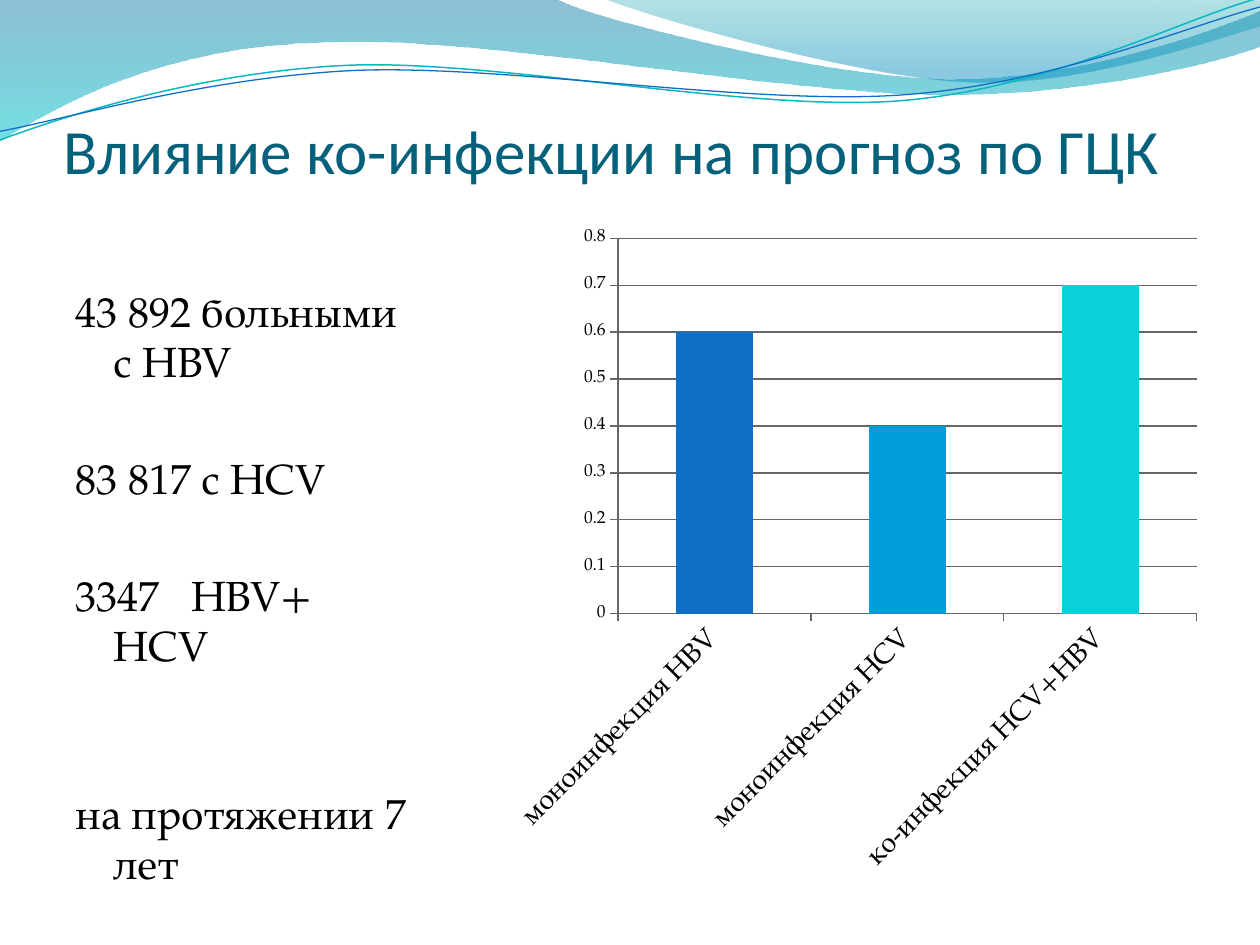
from lxml.etree import Element, SubElement
from pptx import Presentation
from pptx.chart.data import CategoryChartData
from pptx.dml.color import RGBColor
from pptx.enum.chart import XL_CHART_TYPE, XL_TICK_MARK
from pptx.enum.text import MSO_ANCHOR, MSO_AUTO_SIZE, PP_ALIGN
from pptx.oxml.ns import qn
from pptx.util import Pt

# Content
TITLE = "Влияние ко-инфекции на прогноз по ГЦК"
# Spans of text and the space before them, in points; the wide gap is one spaced-out blank
WIDE_GAP = " "
COHORTS = [
    (["43 892 больными с HBV"], 0),
    (["83 817 с HCV"], 38),
    (["3347", WIDE_GAP, "HBV+ HCV"], 38),
    (["на протяжении 7 лет"], 67),
]
# Category, value, bar colour
BARS = [
    ("моноинфекция HBV", 0.6, "0F6FC6"),
    ("моноинфекция HCV", 0.4, "009DD9"),
    ("ко-инфекция HCV+HBV", 0.7, "0BD0D9"),
]
HEADING_FONT, BODY_FONT = "Calibri", "TeX Gyre Pagella"
# Chart frame and plot area on the page: left, top, width, height
CHART_FRAME = (286.5, 124, 405.5, 382)
PLOT_FRAME = (353.1, 136.2, 330.9, 214.6)

# Header waves: a start, then line ends (one point) or Bezier curves (three points)
BANDS = [
    ([[(0, 0)], [(317, -1)],
      [(343, 12), (478, 45), (546, 45)], [(614, 45), (690, 19), (720, 6)], [(721, 26)],
      [(708, 32), (626, 55), (537, 54)], [(446, 54), (275, 20), (185, 24)],
      [(93, 26), (33, 60), (-1, 81)]],
     [(0, "0074A1", 45), (1, "00C6CF", 55)]),
    ([[(345, -1)], [(366, 8), (491, 45), (554, 47)],
      [(616, 50), (692, 23), (720, 15)], [(720, 0)]],
     [(0, "00A1A9", 30), (0.8, "008BBF", 45)]),
]
STRANDS = [
    ([[(0, 80)], [(35, 67), (114, 41), (199.5, 37.3)],
      [(284, 34), (427, 64), (513, 57.7)], [(600, 51), (675, 11), (719, -1)]],
     "0AB8BF", 0.85),
    ([[(0, 75)], [(34, 69), (118, 44), (204, 40.2)],
      [(290, 37), (430, 60.5), (516, 54.2)], [(602, 48), (678, 15), (720, 4)]],
     "0F6FC6", 0.75),
]


def color(value):
    return RGBColor.from_string(value)


def add_outline(shapes, segments, close):
    """Draw a freeform whose three-point segments are Bezier curves."""
    start, *rest = [(Pt(x), Pt(y)) for segment in segments for x, y in segment]
    builder = shapes.build_freeform(*start)
    builder.add_line_segments(rest, close=close)
    shape = builder.convert_to_shape()
    shape.shadow.inherit = False
    lines = iter(list(shape._element.iter(qn("a:lnTo"))))
    for segment in segments[1:]:
        group = [next(lines) for _ in segment]
        if len(group) == 3:
            curve = Element(qn("a:cubicBezTo"))
            group[0].addprevious(curve)
            for line in group:
                curve.append(line[0])
                line.getparent().remove(line)
    return shape


def add_waves(shapes):
    for segments, stops in BANDS:
        band = add_outline(shapes, segments, True)
        band.line.fill.background()
        band.fill.gradient()
        band.fill.gradient_angle = 270
        for stop, (position, shade, _) in zip(band.fill.gradient_stops, stops):
            stop.position = position
            stop.color.rgb = color(shade)
        for element, (_, _, opacity) in zip(band._element.spPr.iter(qn("a:srgbClr")), stops):
            SubElement(element, qn("a:alpha"), val=str(opacity * 1000))
    for segments, shade, width in STRANDS:
        strand = add_outline(shapes, segments, False)
        strand.fill.background()
        strand.line.color.rgb = color(shade)
        strand.line.width = Pt(width)


def place(box, left, top, width, height):
    box.left, box.top, box.width, box.height = Pt(left), Pt(top), Pt(width), Pt(height)


def style(font, name, size, shade):
    font.name, font.size = name, Pt(size)
    font.color.rgb = color(shade)


def fill_title(box):
    place(box, 36, 56, 648, 51)
    frame = box.text_frame
    frame.text = TITLE
    frame.auto_size = MSO_AUTO_SIZE.NONE
    frame.vertical_anchor = MSO_ANCHOR.BOTTOM
    frame.margin_left = frame.margin_right = frame.margin_bottom = 0
    para = frame.paragraphs[0]
    para.alignment = PP_ALIGN.LEFT
    style(para.font, HEADING_FONT, 36, "04617B")


def fill_body(box):
    place(box, 36, 126, 206, 363.5)
    frame = box.text_frame
    frame.auto_size = MSO_AUTO_SIZE.NONE
    frame.margin_top = Pt(37)
    for index, (texts, gap) in enumerate(COHORTS):
        para = frame.add_paragraph() if index else frame.paragraphs[0]
        for text in texts:
            span = para.add_run()
            span.text = text
            if text == WIDE_GAP:
                span.font._element.set("spc", "1200")
        para.space_before = Pt(gap)
        # Hanging indent, no bullet
        properties = para._p.get_or_add_pPr()
        properties.set("marL", str(Pt(21.6)))
        properties.set("indent", str(-Pt(21.6)))
        SubElement(properties, qn("a:buNone"))
        style(para.font, BODY_FONT, 24, "000000")


def fix_plot_area(chart):
    plot_area = chart._chartSpace.chart.plotArea
    layout = plot_area.find(qn("c:layout"))
    if layout is None:
        layout = Element(qn("c:layout"))
        plot_area.insert(0, layout)
    manual = SubElement(layout, qn("c:manualLayout"))
    left, top, width, height = CHART_FRAME
    plot_left, plot_top, plot_width, plot_height = PLOT_FRAME
    for tag, value in [
        ("layoutTarget", "inner"), ("xMode", "edge"), ("yMode", "edge"),
        ("x", (plot_left - left) / width), ("y", (plot_top - top) / height),
        ("w", plot_width / width), ("h", plot_height / height),
    ]:
        SubElement(manual, qn(f"c:{tag}"), val=str(value))


def add_bar_chart(shapes):
    data = CategoryChartData()
    data.categories = [name for name, _, _ in BARS]
    data.add_series("Series 1", [value for _, value, _ in BARS])
    frame = [Pt(length) for length in CHART_FRAME]
    chart = shapes.add_chart(XL_CHART_TYPE.COLUMN_CLUSTERED, *frame, data).chart
    chart.has_legend = chart.has_title = False
    style(chart.font, BODY_FONT, 10, "000000")
    fix_plot_area(chart)

    # Bars
    plot = chart.plots[0]
    plot.gap_width = 150
    plot.vary_by_categories = False
    for index, (_, _, shade) in enumerate(BARS):
        fill = plot.series[0].points[index].format.fill
        fill.solid()
        fill.fore_color.rgb = color(shade)

    # Axes
    values, categories = chart.value_axis, chart.category_axis
    values.minimum_scale, values.maximum_scale, values.major_unit = 0, 0.8, 0.1
    values.has_major_gridlines = True
    for axis in (values, categories):
        axis.major_tick_mark = XL_TICK_MARK.OUTSIDE
        axis.minor_tick_mark = XL_TICK_MARK.NONE
    for part in (values, categories, values.major_gridlines):
        part.format.line.color.rgb = color("666666")
        part.format.line.width = Pt(0.75)
    style(categories.tick_labels.font, BODY_FONT, 16, "000000")
    label_body = categories._element.find(qn("c:txPr")).find(qn("a:bodyPr"))
    label_body.set("rot", "-2700000")
    label_body.set("vert", "horz")


def main():
    deck = Presentation()
    deck.slide_width, deck.slide_height = Pt(720), Pt(540)
    page = deck.slides.add_slide(deck.slide_layouts[1])
    title, body = page.placeholders
    add_waves(page.shapes)
    # Keep the text in front of the waves
    for box in (title, body):
        page.shapes._spTree.append(box._element)
    fill_title(title)
    fill_body(body)
    add_bar_chart(page.shapes)
    deck.save("out.pptx")


if __name__ == "__main__":
    main()
